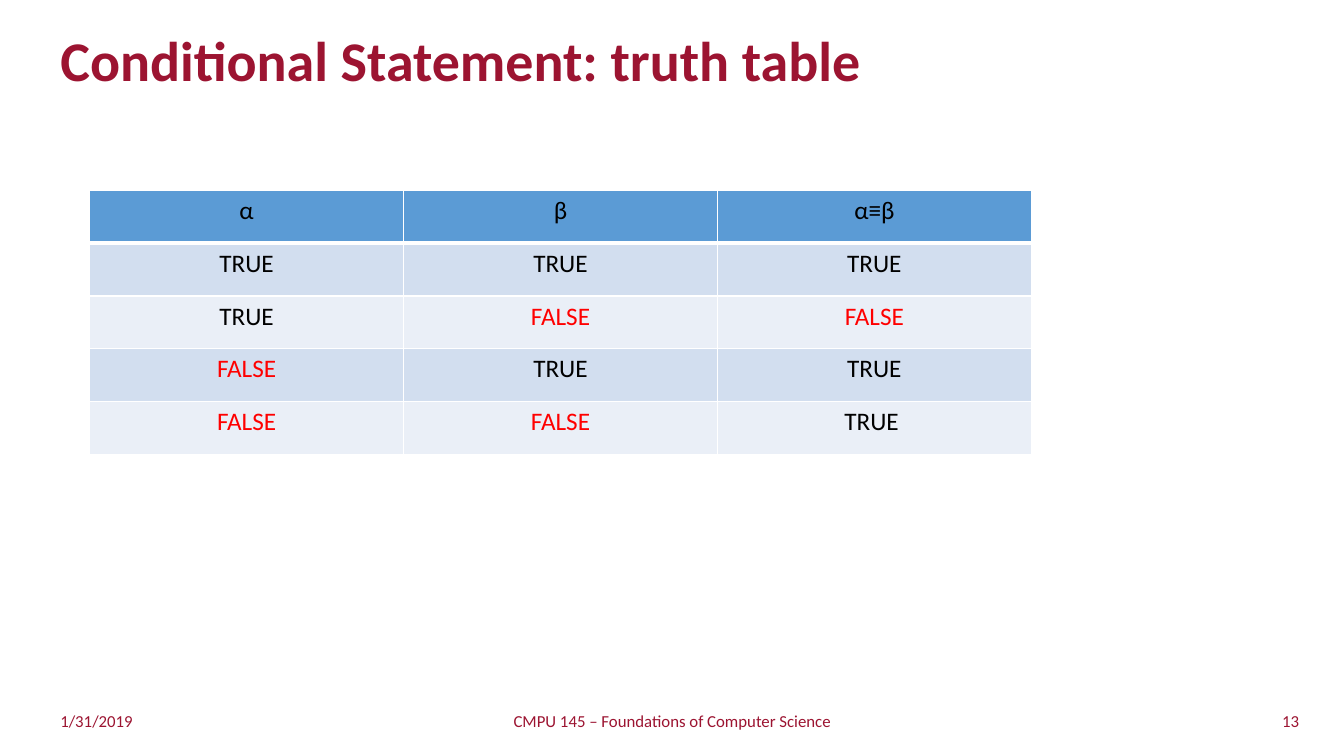
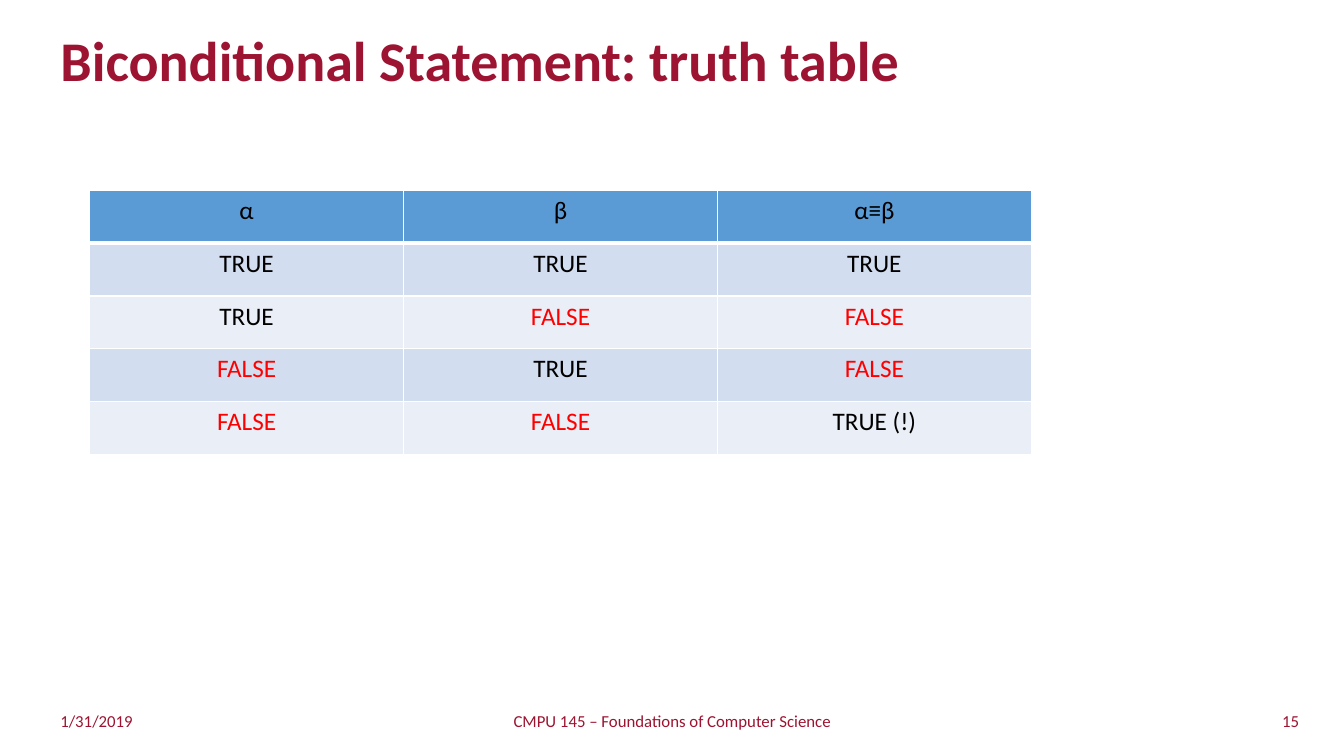
import pptx
import pptx.util
import pptx.dml.color
import pptx.enum.text
import pptx.oxml.ns
import lxml.etree

Cm = pptx.util.Cm
Pt = pptx.util.Pt
ALIGN = pptx.enum.text.PP_ALIGN
MIDDLE = pptx.enum.text.MSO_ANCHOR.MIDDLE

FONT = "Calibri"
COLOURS = {
    "maroon": "9C1431",
    "black": "000000",
    "false": "FF0000",
    "header": "5B9BD5",
    "odd_row": "D2DEEF",
    "even_row": "EAEFF7",
    "border": "FFFFFF",
}

TITLE_ONLY = 5
FOOTER_TOP = 17.65
FOOTER_HEIGHT = 1.02
DATE = "1/31/2019"
COURSE = "CMPU 145 – Foundations of Computer Science"

COLUMN_WIDTH = 7.91
ROW_HEIGHT = 1.33
THIN = 1
THICK = 3

HEADINGS = ["α", "β", "α≡β"]
OPERANDS = [("TRUE", "TRUE"), ("TRUE", "FALSE"), ("FALSE", "TRUE"), ("FALSE", "FALSE")]
TRUTH_TABLES = [
    ("Conditional Statement: truth table", 13, ["TRUE", "FALSE", "TRUE", "TRUE "]),
    ("Biconditional Statement: truth table", 15, ["TRUE", "FALSE", "FALSE", "TRUE (!)"]),
]


def rgb(name):
    return pptx.dml.color.RGBColor.from_string(COLOURS[name])


def write(frame, text, size, colour, align=ALIGN.LEFT, bold=False):
    frame.text = text
    para = frame.paragraphs[0]
    para.alignment = align
    for span in para.runs:
        span.font.name = FONT
        span.font.size = Pt(size)
        span.font.bold = bold
        span.font.color.rgb = rgb(colour)


def add_title(page, text):
    title = page.shapes.title
    title.left, title.top = Cm(1.27), Cm(0.64)
    title.width, title.height = Cm(29.08), Cm(1.9)
    frame = title.text_frame
    frame.auto_size = pptx.enum.text.MSO_AUTO_SIZE.NONE
    frame.vertical_anchor = MIDDLE
    write(frame, text, 40, "maroon", bold=True)
    frame.paragraphs[0].line_spacing = 0.9


def add_footer(page, number):
    parts = [
        (DATE, 1.27, 9.55, ALIGN.LEFT),
        (COURSE, 11.23, 11.43, ALIGN.CENTER),
        (str(number), 23.44, 9.55, ALIGN.RIGHT),
    ]
    for text, left, width, align in parts:
        box = page.shapes.add_textbox(Cm(left), Cm(FOOTER_TOP), Cm(width), Cm(FOOTER_HEIGHT))
        box.text_frame.word_wrap = True
        box.text_frame.vertical_anchor = MIDDLE
        write(box.text_frame, text, 12, "maroon", align)


def add_border(cell, side, points):
    qn = pptx.oxml.ns.qn
    properties = cell._tc.get_or_add_tcPr()
    line = lxml.etree.SubElement(properties, qn(f"a:ln{side}"), w=str(Pt(points)))
    fill = lxml.etree.SubElement(line, qn("a:solidFill"))
    lxml.etree.SubElement(fill, qn("a:srgbClr"), val=COLOURS["border"])


def format_cell(cell, text, row):
    widths = {
        "L": THIN,
        "R": THIN,
        "T": THICK if row == 1 else THIN,
        "B": THICK if row == 0 else THIN,
    }
    for side, points in widths.items():
        add_border(cell, side, points)
    cell.fill.solid()
    band = "odd_row" if row % 2 else "even_row"
    cell.fill.fore_color.rgb = rgb("header" if row == 0 else band)
    colour = "false" if text == "FALSE" else "black"
    write(cell.text_frame, text, 18, colour, ALIGN.CENTER)


def add_truth_table(page, results):
    rows = [HEADINGS] + [[*pair, result] for pair, result in zip(OPERANDS, results)]
    table = page.shapes.add_table(
        len(rows), len(HEADINGS), Cm(2.26), Cm(4.8),
        Cm(COLUMN_WIDTH * len(HEADINGS)), Cm(ROW_HEIGHT * len(rows)),
    ).table
    for row, texts in enumerate(rows):
        for column, text in enumerate(texts):
            format_cell(table.cell(row, column), text, row)


def main():
    deck = pptx.Presentation()
    deck.slide_width, deck.slide_height = Cm(33.87), Cm(19.05)
    for title, number, results in TRUTH_TABLES:
        page = deck.slides.add_slide(deck.slide_layouts[TITLE_ONLY])
        add_title(page, title)
        add_footer(page, number)
        add_truth_table(page, results)
    deck.save("out.pptx")


if __name__ == "__main__":
    main()
